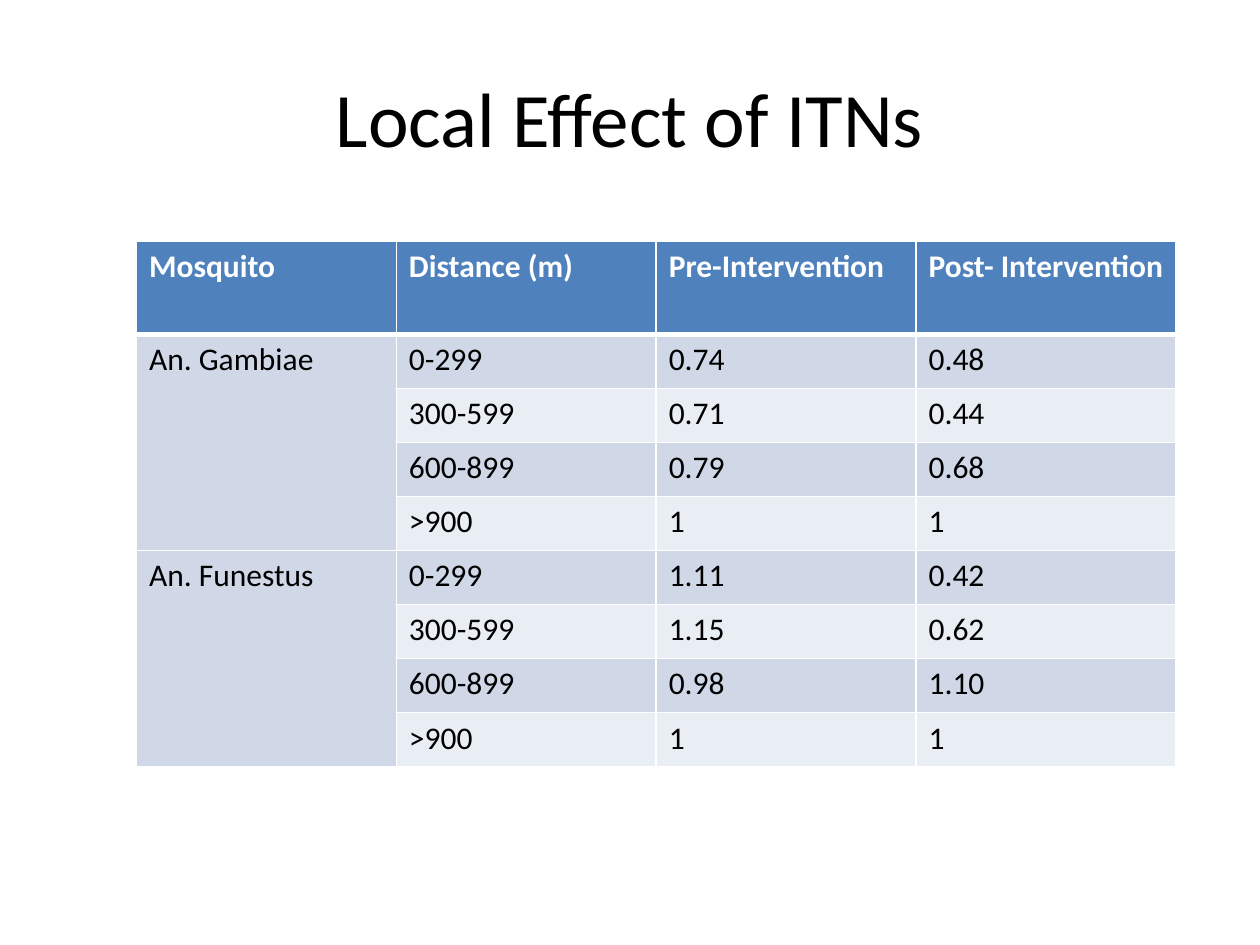
from lxml import etree
from pptx import Presentation
from pptx.dml.color import RGBColor
from pptx.enum.text import MSO_ANCHOR, PP_ALIGN
from pptx.oxml.ns import qn
from pptx.util import Pt

MIDDLE, TOP = MSO_ANCHOR.MIDDLE, MSO_ANCHOR.TOP
CENTER, LEFT = PP_ALIGN.CENTER, PP_ALIGN.LEFT

WHITE = RGBColor(0xFF, 0xFF, 0xFF)
BLACK = RGBColor(0x00, 0x00, 0x00)
HEADER_BLUE = RGBColor(0x4F, 0x81, 0xBD)
DARK_BAND = RGBColor(0xD0, 0xD8, 0xE8)
LIGHT_BAND = RGBColor(0xE9, 0xED, 0xF4)

HEADINGS = ["Mosquito", "Distance (m)", "Pre-Intervention", "Post- Intervention"]
DISTANCES = ["0-299", "300-599", "600-899", ">900"]
RATIOS = {
    "An. Gambiae": [("0.74", "0.48"), ("0.71", "0.44"), ("0.79", "0.68"), ("1", "1")],
    "An. Funestus": [("1.11", "0.42"), ("1.15", "0.62"), ("0.98", "1.10"), ("1", "1")],
}


class SlideBuilder:
    """Holds the text style and the current page."""

    font = "Calibri"

    def __init__(self, page):
        self.page = page

    def add_text(self, frame, text, size, color=BLACK, bold=False, align=LEFT):
        para = frame.paragraphs[0]
        para.alignment = align
        span = para.add_run()
        span.text = text
        span.font.name = self.font
        span.font.size = Pt(size)
        span.font.bold = bold
        span.font.color.rgb = color

    def title(self, text, left, top, width, height):
        box = self.page.shapes.add_textbox(Pt(left), Pt(top), Pt(width), Pt(height))
        frame = box.text_frame
        frame.word_wrap = True
        frame.vertical_anchor = MIDDLE
        self.add_text(frame, text, 44, align=CENTER)

    def border(self, cell, side, width):
        line = etree.SubElement(cell._tc.get_or_add_tcPr(), qn(f"a:ln{side}"), w=str(Pt(width)))
        fill = etree.SubElement(line, qn("a:solidFill"))
        etree.SubElement(fill, qn("a:srgbClr"), val=str(WHITE))

    def cell(self, cell, text, fill, color=BLACK, bold=False, top=1, bottom=1):
        for side, width in (("L", 1), ("R", 1), ("T", top), ("B", bottom)):
            self.border(cell, side, width)
        cell.fill.solid()
        cell.fill.fore_color.rgb = fill
        cell.vertical_anchor = TOP
        if text:
            self.add_text(cell.text_frame, text, 18, color, bold)

    def table(self, left, top, column_width, header_height, row_height):
        group_size = len(DISTANCES)
        row_count = 1 + group_size * len(RATIOS)
        column_count = len(HEADINGS)
        height = header_height + row_height * (row_count - 1)
        grid = self.page.shapes.add_table(
            row_count, column_count, Pt(left), Pt(top),
            Pt(column_width * column_count), Pt(height)).table
        for column in grid.columns:
            column.width = Pt(column_width)
        for index, row in enumerate(grid.rows):
            row.height = Pt(row_height if index else header_height)

        # Header row
        for column, heading in enumerate(HEADINGS):
            self.cell(grid.cell(0, column), heading, HEADER_BLUE, WHITE, True, bottom=3)

        # One group of distances per mosquito
        for group, (mosquito, pairs) in enumerate(RATIOS.items()):
            first = 1 + group * group_size
            for offset, (distance, pair) in enumerate(zip(DISTANCES, pairs)):
                row = first + offset
                band = LIGHT_BAND if offset % 2 else DARK_BAND
                rule = 3 if row == 1 else 1
                name = "" if offset else mosquito
                self.cell(grid.cell(row, 0), name, DARK_BAND, top=rule)
                for column, text in enumerate((distance, *pair), start=1):
                    self.cell(grid.cell(row, column), text, band, top=rule)
            grid.cell(first, 0).merge(grid.cell(first + group_size - 1, 0))


def main():
    deck = Presentation()
    deck.slide_width, deck.slide_height = Pt(720), Pt(540)
    builder = SlideBuilder(deck.slides.add_slide(deck.slide_layouts[6]))

    # Title
    builder.title("Local Effect of ITNs", 36, 21.6, 648, 90)

    # Results table
    builder.table(78, 138, column_width=148.5, header_height=53.2, row_height=30.87)

    deck.save("out.pptx")


if __name__ == "__main__":
    main()
